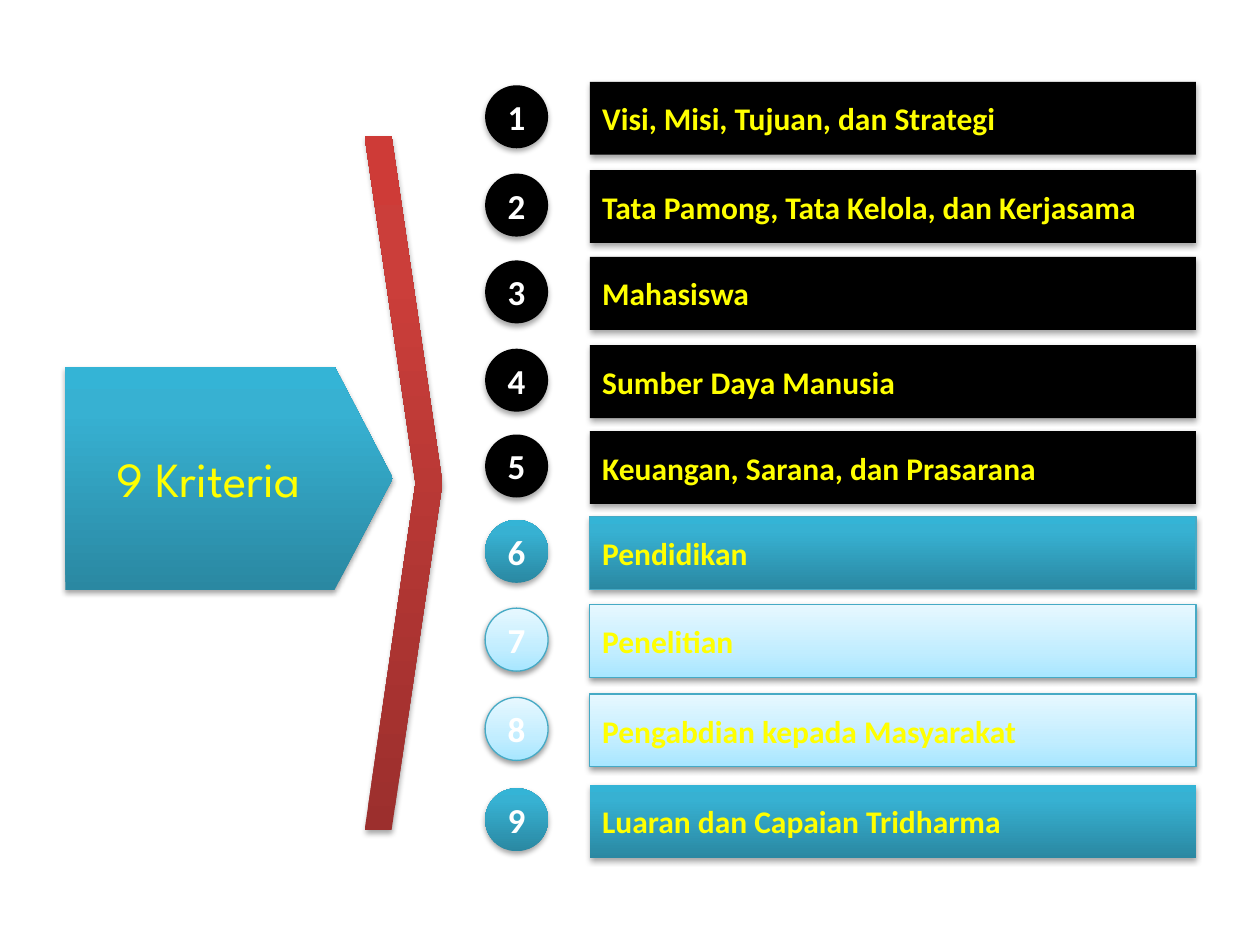
from dataclasses import dataclass

from lxml.etree import SubElement
from pptx import Presentation
from pptx.dml.color import RGBColor
from pptx.enum.shapes import MSO_SHAPE
from pptx.enum.text import MSO_ANCHOR, PP_ALIGN
from pptx.oxml.ns import qn
from pptx.util import Cm, Pt


@dataclass(frozen=True)
class Style:
    """Fill stops, outline and shadow of one kind of shape."""
    stops: tuple
    outline: str = ""
    shadow_alpha: int = 35
    shadow_dist: float = 1.8


@dataclass(frozen=True)
class Theme:
    """Colours, fonts and type sizes of the slide."""
    yellow: str = "FFFF00"
    white: str = "FFFFFF"
    edge: str = "46AAC5"
    black: tuple = ((0, "000000"),)
    red: tuple = ((0, "9C2F2D"), (80, "CB3E3A"), (100, "CE3B37"))
    teal: tuple = ((0, "2A88A2"), (80, "37B1D2"), (100, "34B4D6"))
    pale: tuple = ((0, "A7E6FF"), (35, "C1EDFF"), (100, "E7F8FF"))
    body_font: str = "Calibri"
    title_font: str = "League Spartan"
    title_size: int = 28
    number_size: int = 20
    label_size: int = 18


THEME = Theme()
BLACK = Style(THEME.black)
RED = Style(THEME.red)
TEAL = Style(THEME.teal)
TEAL_EDGED = Style(THEME.teal, THEME.edge)
PALE = Style(THEME.pale, THEME.edge, 38, 1.6)

CRITERIA = (
    (0, "Visi, Misi, Tujuan, dan Strategi", BLACK, BLACK),
    (1.78, "Tata Pamong, Tata Kelola, dan Kerjasama", BLACK, BLACK),
    (3.53, "Mahasiswa", BLACK, BLACK),
    (5.31, "Sumber Daya Manusia", BLACK, BLACK),
    (7.04, "Keuangan, Sarana, dan Prasarana", BLACK, BLACK),
    (8.76, "Pendidikan", TEAL, TEAL_EDGED),
    (10.54, "Penelitian", PALE, PALE),
    (12.34, "Pengabdian kepada Masyarakat", PALE, PALE),
    (14.17, "Luaran dan Capaian Tridharma", TEAL, TEAL),
)


def paint(sp, style):
    """Give a shape its fill, outline and soft drop shadow."""
    if len(style.stops) == 1:
        sp.fill.solid()
        sp.fill.fore_color.rgb = RGBColor.from_string(style.stops[0][1])
    else:
        sp.fill.gradient()
        sp.fill.gradient_angle = 90
        stops = sp.element.spPr.find(".//" + qn("a:gsLst"))
        stops.clear()
        for pos, color in style.stops:
            stop = SubElement(stops, qn("a:gs"), pos=str(pos * 1000))
            SubElement(stop, qn("a:srgbClr"), val=color)
    if style.outline:
        sp.line.color.rgb = RGBColor.from_string(style.outline)
        sp.line.width = Pt(0.75)
    else:
        sp.line.fill.background()
    sp.shadow.inherit = False
    effects = sp.element.spPr.find(qn("a:effectLst"))
    shadow = SubElement(effects, qn("a:outerShdw"), blurRad=str(Pt(3.15)),
                        dist=str(Pt(style.shadow_dist)), dir="5400000", rotWithShape="0")
    color = SubElement(shadow, qn("a:srgbClr"), val="000000")
    SubElement(color, qn("a:alpha"), val=str(style.shadow_alpha * 1000))


def add_box(s, kind, box, style, adjust=None):
    """Add a painted preset shape in a box given in centimetres."""
    sp = s.shapes.add_shape(kind, *map(Cm, box))
    if adjust is not None:
        sp.adjustments[0] = adjust
    paint(sp, style)
    return sp


def write(sp, text, size, color, font=THEME.body_font, bold=True, align=PP_ALIGN.CENTER):
    """Write one middle-anchored paragraph in a shape."""
    tf = sp.text_frame
    tf.word_wrap = True
    tf.vertical_anchor = MSO_ANCHOR.MIDDLE
    p = tf.paragraphs[0]
    p.text = text
    p.alignment = align
    p.font.name = font
    p.font.size = Pt(size)
    p.font.bold = bold
    p.font.color.rgb = RGBColor.from_string(color)


def add_heading(s, left, top, width, height):
    """Place the title arrow and the tall chevron beside it."""
    plate_h, chevron_w = 4.5, 1.57
    add_box(s, MSO_SHAPE.CHEVRON, (left + width - chevron_w, top, chevron_w, height), RED, 0.654)
    plate = add_box(s, MSO_SHAPE.PENTAGON, (left, top + 4.65, 6.6, plate_h), TEAL, 0.261)
    write(plate, "9 Kriteria ", THEME.title_size, THEME.yellow, THEME.title_font, bold=False)


def add_criteria(s, left, top, width):
    """Place the numbered rows, each a disc and a bar."""
    disc, bar_x, bar_h = 1.27, 2.11, 1.47
    for number, (y, label, disc_style, bar_style) in enumerate(CRITERIA, 1):
        bar = add_box(s, MSO_SHAPE.RECTANGLE,
                      (left + bar_x, top + y, width - bar_x, bar_h), bar_style)
        write(bar, label, THEME.label_size, THEME.yellow, align=PP_ALIGN.LEFT)
        badge = add_box(s, MSO_SHAPE.OVAL, (left, top + y + 0.07, disc, disc), disc_style)
        write(badge, str(number), THEME.number_size, THEME.white)


def main():
    """Build the slide and save it."""
    prs = Presentation()
    prs.slide_width, prs.slide_height = Cm(25.4), Cm(19.05)
    s = prs.slides.add_slide(prs.slide_layouts[6])
    add_heading(s, 1.32, 2.74, 7.6, 14)
    add_criteria(s, 9.78, 1.65, 14.33)
    prs.save("out.pptx")


if __name__ == "__main__":
    main()
